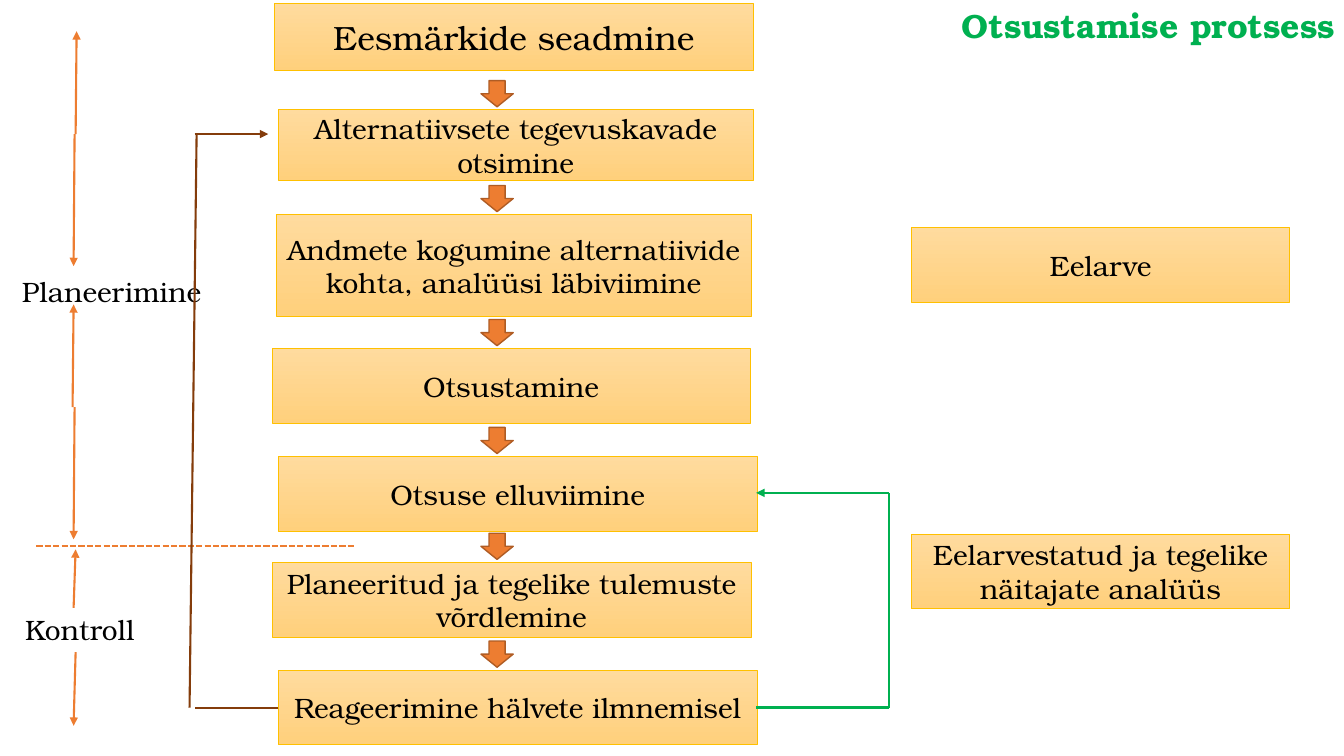
"""Decision process slide: seven steps, two phases and two feedback loops."""
from lxml import etree
from pptx import Presentation
from pptx import util as u
from pptx.dml.color import RGBColor
from pptx.enum import dml, shapes, text
from pptx.oxml.ns import qn

COLUMNS, ROWS = 1333, 750
CELL = u.Inches(0.01)
FONT = "TeX Gyre Bonum"
ORANGE, BROWN, GREEN, BLACK = "ED7D31", "843C0B", "00B050", "000000"
BOX_TOP, BOX_BOTTOM, BOX_EDGE, ARROW_EDGE = "FFDB9E", "FFD07C", "FFC000", "AF5C24"

STEPS = [
    ("Eesmärkide seadmine", (272, 3, 475, 67), 24),
    ("Alternatiivsete tegevuskavade otsimine", (276, 109, 471, 70), 20),
    ("Andmete kogumine alternatiivide kohta, analüüsi läbiviimine", (274, 213, 471, 101), 20),
    ("Otsustamine", (270, 346, 474, 74), 20),
    ("Otsuse elluviimine", (276, 453, 475, 74), 20),
    ("Planeeritud ja tegelike tulemuste võrdlemine", (270, 558, 475, 74), 20),
    ("Reageerimine hälvete ilmnemisel", (276, 665, 475, 74), 20),
]
BUDGET = [
    ("Eelarve", (904, 226, 375, 74), 20),
    ("Eelarvestatud ja tegelike näitajate analüüs", (904, 530, 375, 74), 20),
]
TITLE = ("Otsustamise protsess", (851, 0, 483, 50))
PHASES = [("Planeerimine", (12, 267, 203, 44)), ("Kontroll", (15, 603, 160, 44))]
ARROW_LEFT, ARROW_WIDTH, ARROW_HEIGHT, ARROW_GAP = 477, 32, 26, 3

PHASE_ARROWS = [
    (74, 133, 73, 264), (75, 133, 76, 31), (74, 404, 73, 535),
    (72, 404, 73, 302), (73, 603, 75, 545), (75, 647, 73, 720),
]
PHASE_BORDER = (36, 542, 351, 542)
LOOPS = [
    ((276, 702, 193, 702), BROWN, 1.5, False),
    ((188, 702, 195, 133), BROWN, 1.5, False),
    ((193, 133, 266, 133), BROWN, 1.5, True),
    ((750, 702, 882, 702), GREEN, 2.5, False),
    ((882, 702, 882, 489), GREEN, 1.5, False),
    ((882, 489, 750, 489), GREEN, 1.5, True),
]


def color(value):
    return RGBColor.from_string(value)


def cells(place):
    return [CELL * number for number in place]


def write(frame, content, size=20, ink=BLACK, bold=False,
          align=text.PP_ALIGN.LEFT, anchor=text.MSO_ANCHOR.TOP):
    frame.word_wrap = True
    frame.vertical_anchor = anchor
    para = frame.paragraphs[0]
    para.alignment = align
    span = para.add_run()
    span.text = content
    span.font.name, span.font.size, span.font.bold = FONT, u.Pt(size), bold
    span.font.color.rgb = color(ink)


def add_label(page, content, place, **style):
    write(page.shapes.add_textbox(*cells(place)).text_frame, content, **style)


def add_figure(page, kind, place, edge, width):
    figure = page.shapes.add_shape(kind, *cells(place))
    figure.shadow.inherit = False
    figure.line.color.rgb = color(edge)
    figure.line.width = u.Pt(width)
    return figure


def add_box(page, content, place, size):
    box = add_figure(page, shapes.MSO_SHAPE.RECTANGLE, place, BOX_EDGE, 0.5)
    box.fill.gradient()
    box.fill.gradient_angle = 270
    for stop, shade in zip(box.fill.gradient_stops, (BOX_TOP, BOX_BOTTOM)):
        stop.color.rgb = color(shade)
    write(box.text_frame, content, size=size,
          align=text.PP_ALIGN.CENTER, anchor=text.MSO_ANCHOR.MIDDLE)


def add_step_arrow(page, next_top):
    place = (ARROW_LEFT, next_top - ARROW_GAP - ARROW_HEIGHT, ARROW_WIDTH, ARROW_HEIGHT)
    arrow = add_figure(page, shapes.MSO_SHAPE.DOWN_ARROW, place, ARROW_EDGE, 1)
    arrow.fill.solid()
    arrow.fill.fore_color.rgb = color(ORANGE)


def add_line(page, ends, ink=ORANGE, width=1.5, head=True, dash=None):
    line = page.shapes.add_connector(shapes.MSO_CONNECTOR.STRAIGHT, *cells(ends))
    line.line.color.rgb = color(ink)
    line.line.width = u.Pt(width)
    if dash:
        line.line.dash_style = dash
    properties = line.element.spPr
    if head:
        etree.SubElement(properties.find(qn("a:ln")), qn("a:tailEnd"), type="triangle")
    etree.SubElement(properties, qn("a:effectLst"))


def main():
    deck = Presentation()
    deck.slide_width, deck.slide_height = cells((COLUMNS, ROWS))
    page = deck.slides.add_slide(deck.slide_layouts[6])
    add_label(page, *TITLE, size=24, ink=GREEN, bold=True, align=text.PP_ALIGN.RIGHT)
    for content, place, size in STEPS + BUDGET:
        add_box(page, content, place, size)
    for content, place in PHASES:
        add_label(page, content, place)
    for _, place, _ in STEPS[1:]:
        add_step_arrow(page, place[1])
    for ends in PHASE_ARROWS:
        add_line(page, ends)
    add_line(page, PHASE_BORDER, head=False, dash=dml.MSO_LINE.SQUARE_DOT)
    for ends, ink, width, head in LOOPS:
        add_line(page, ends, ink, width, head)
    deck.save("out.pptx")


if __name__ == "__main__":
    main()
